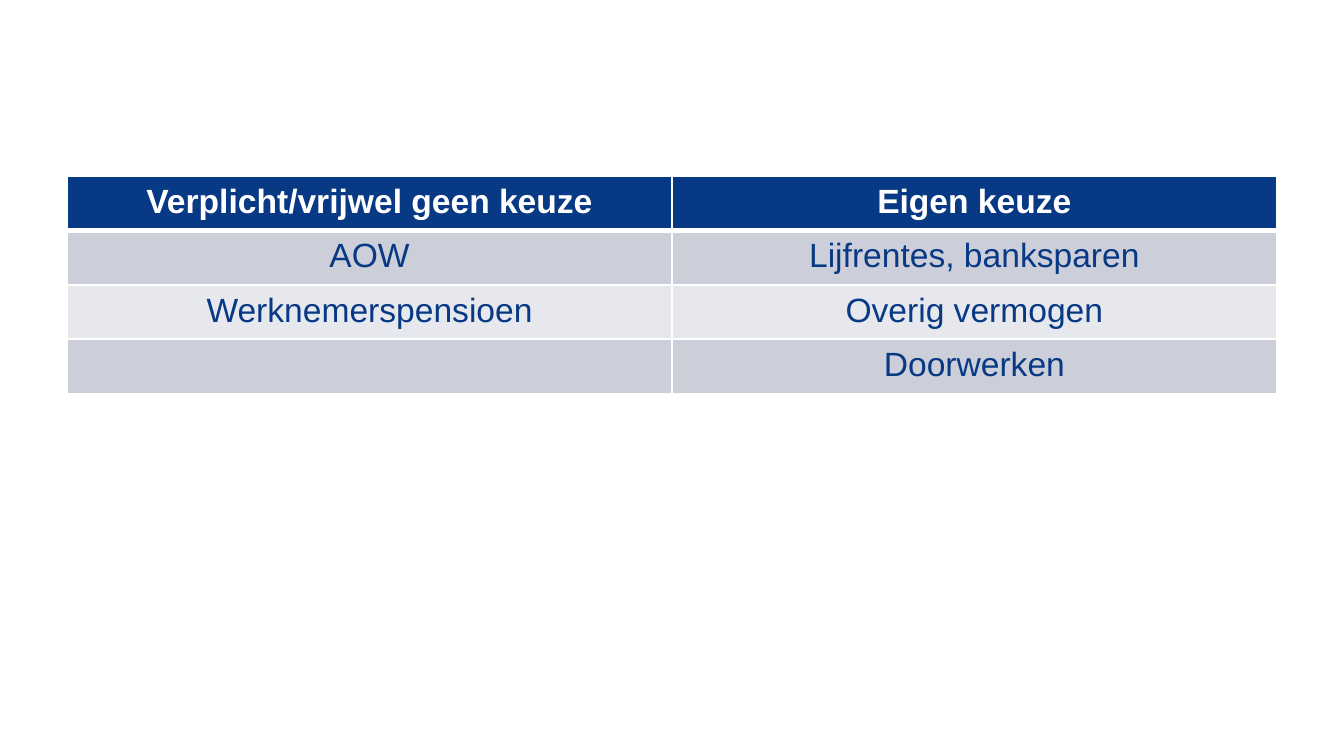
from lxml.etree import SubElement
from pptx import Presentation
from pptx.dml.color import RGBColor
from pptx.enum.text import PP_ALIGN as Align
from pptx.oxml.ns import qn
from pptx.util import Inches, Pt


def color(hex_code):
    return RGBColor.from_string(hex_code)


def add_border(cell, side, points):
    line = SubElement(cell._tc.get_or_add_tcPr(), qn(f"a:{side}"), w=str(Pt(points)))
    fill = SubElement(line, qn("a:solidFill"))
    SubElement(fill, qn("a:srgbClr"), val=WHITE)


WHITE, NAVY, GREY, LIGHT_GREY = "FFFFFF", "083984", "CCCED9", "E7E8ED"
choices = [
    ("Verplicht/vrijwel geen keuze", "Eigen keuze"),
    ("AOW", "Lijfrentes, banksparen"),
    ("Werknemerspensioen", "Overig vermogen"),
    ("", "Doorwerken"),
]
row_fills = [NAVY, GREY, LIGHT_GREY, GREY]

prs = Presentation()
prs.slide_width = Inches(10)
prs.slide_height = Inches(10) * 9 // 16
slide = prs.slides.add_slide(prs.slide_layouts[6])

pension_table = slide.shapes.add_table(
    len(choices), 2, Inches(0.5), Inches(1.31), Inches(9), Inches(1.62)
).table

for row_index, (labels, row_fill) in enumerate(zip(choices, row_fills)):
    is_header = row_index == 0
    for column_index, label in enumerate(labels):
        cell = pension_table.cell(row_index, column_index)
        for side in ("lnL", "lnR", "lnT", "lnB"):
            header_edge = (is_header and side == "lnB") or (row_index == 1 and side == "lnT")
            add_border(cell, side, 3 if header_edge else 1)
        cell.fill.solid()
        cell.fill.fore_color.rgb = color(row_fill)
        paragraph = cell.text_frame.paragraphs[0]
        paragraph.text = label
        paragraph.alignment = Align.CENTER
        for run in paragraph.runs:
            run.font.name = "Arial"
            run.font.size = Pt(18)
            run.font.bold = is_header
            run.font.color.rgb = color(WHITE if is_header else NAVY)

prs.save("out.pptx")
